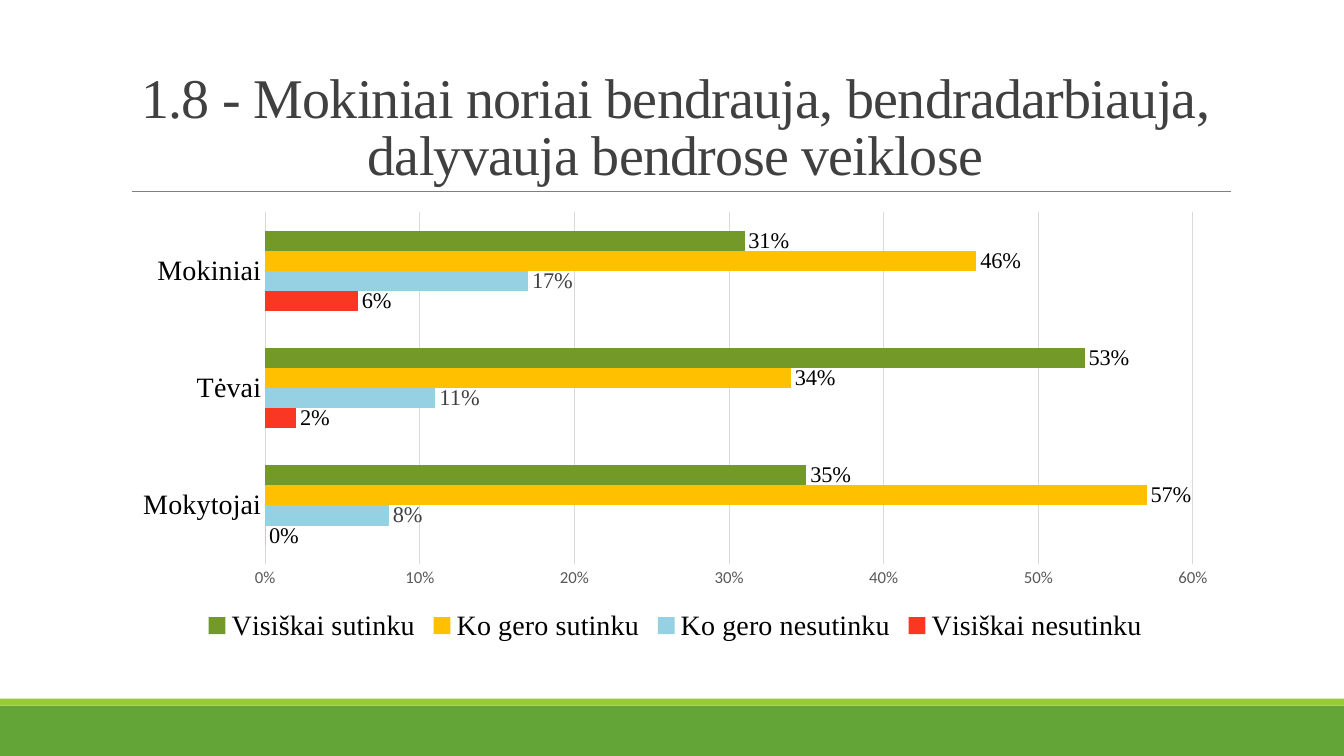
from dataclasses import dataclass

import lxml.etree
import pptx
import pptx.chart.data
import pptx.dml.color
import pptx.enum.chart
import pptx.enum.shapes
import pptx.enum.text
import pptx.oxml
import pptx.oxml.ns
import pptx.util

Pt = pptx.util.Pt
SERIF = "Times New Roman"
SANS = "Calibri"
GRID_GREY = "D9D9D9"
TITLE = "1.8 - Mokiniai noriai bendrauja, bendradarbiauja, dalyvauja bendrose veiklose"
GROUPS = ["Mokytojai", "Tėvai", "Mokiniai"]


@dataclass
class Band:
    top: float
    height: float
    color: str


@dataclass
class Answer:
    name: str
    shares: tuple[float, ...]
    color: str
    label_color: str = "000000"


BANDS = [Band(504, 36, "63A537"), Band(499, 5, "99CB38")]
ANSWERS = [
    Answer("Visiškai nesutinku", (0, 0.02, 0.06), "FA3722"),
    Answer("Ko gero nesutinku", (0.08, 0.11, 0.17), "95D1E2", "404040"),
    Answer("Ko gero sutinku", (0.57, 0.34, 0.46), "FFC000"),
    Answer("Visiškai sutinku", (0.35, 0.53, 0.31), "739A28"),
]


def rgb(color: str) -> pptx.dml.color.RGBColor:
    return pptx.dml.color.RGBColor.from_string(color)


def style_font(font, name: str, size: float, color: str) -> None:
    font.name = name
    font.size = Pt(size)
    font.bold = False
    font.color.rgb = rgb(color)


def style_line(line, color: str, width: float) -> None:
    line.color.rgb = rgb(color)
    line.width = Pt(width)


def add_band(slide, band: Band) -> None:
    shape = slide.shapes.add_shape(
        pptx.enum.shapes.MSO_SHAPE.RECTANGLE, Pt(0), Pt(band.top), Pt(960), Pt(band.height)
    )
    shape.shadow.inherit = False
    shape.fill.solid()
    shape.fill.fore_color.rgb = rgb(band.color)
    shape.line.fill.background()


def add_title_rule(slide) -> None:
    connector = slide.shapes.add_connector(
        pptx.enum.shapes.MSO_CONNECTOR.STRAIGHT, Pt(94.3), Pt(136.8), Pt(879.1), Pt(136.8)
    )
    style_line(connector.line, "808080", 0.5)
    lxml.etree.SubElement(connector._element.spPr, pptx.oxml.ns.qn("a:effectLst"))


def add_title(slide) -> None:
    text_frame = slide.shapes.add_textbox(Pt(86.4), Pt(22.6), Pt(792), Pt(114.2)).text_frame
    text_frame.word_wrap = True
    text_frame.vertical_anchor = pptx.enum.text.MSO_ANCHOR.BOTTOM
    text_frame.text = TITLE
    paragraph = text_frame.paragraphs[0]
    paragraph.alignment = pptx.enum.text.PP_ALIGN.CENTER
    paragraph.line_spacing = 0.85
    run = paragraph.runs[0]
    style_font(run.font, SERIF, 40, "404040")
    run.font._element.set("spc", "-50")


def style_axes(chart) -> None:
    no_tick = pptx.enum.chart.XL_TICK_MARK.NONE
    for axis in (chart.category_axis, chart.value_axis):
        axis.major_tick_mark = no_tick
        axis.minor_tick_mark = no_tick
    style_font(chart.category_axis.tick_labels.font, SERIF, 20, "000000")
    style_line(chart.category_axis.format.line, GRID_GREY, 0.75)

    value_axis = chart.value_axis
    value_axis.minimum_scale = 0
    value_axis.maximum_scale = 0.6
    value_axis.major_unit = 0.1
    value_axis.tick_labels.number_format = "0%"
    value_axis.tick_labels.number_format_is_linked = False
    style_font(value_axis.tick_labels.font, SANS, 12, "595959")
    value_axis.format.line.fill.background()
    value_axis.has_major_gridlines = True
    style_line(value_axis.major_gridlines.format.line, GRID_GREY, 0.75)


def style_series(series, answer: Answer) -> None:
    series.invert_if_negative = False
    series.format.fill.solid()
    series.format.fill.fore_color.rgb = rgb(answer.color)
    labels = series.data_labels
    labels.show_value = True
    labels.number_format = "0%"
    labels.number_format_is_linked = False
    labels.position = pptx.enum.chart.XL_LABEL_POSITION.OUTSIDE_END
    style_font(labels.font, SERIF, 16, answer.label_color)


def add_answer_chart(slide) -> None:
    data = pptx.chart.data.CategoryChartData(number_format="0%")
    data.categories = GROUPS
    for answer in ANSWERS:
        data.add_series(answer.name, answer.shares)
    chart = slide.shapes.add_chart(
        pptx.enum.chart.XL_CHART_TYPE.BAR_CLUSTERED,
        Pt(86.4), Pt(145.4), Pt(792), Pt(316.8), data,
    ).chart
    style_font(chart.font, SANS, 10, "000000")
    chart.has_title = False
    chart.has_legend = True
    chart.legend.position = pptx.enum.chart.XL_LEGEND_POSITION.BOTTOM
    chart.legend.include_in_layout = False
    style_font(chart.legend.font, SERIF, 20, "000000")
    style_axes(chart)
    plot = chart.plots[0]
    plot.gap_width = 182
    plot.vary_by_categories = False
    for series, answer in zip(plot.series, ANSWERS):
        style_series(series, answer)


def main() -> None:
    presentation = pptx.Presentation()
    presentation.slide_width = Pt(960)
    presentation.slide_height = Pt(540)
    slide = presentation.slides.add_slide(presentation.slide_layouts[6])
    for band in BANDS:
        add_band(slide, band)
    add_title_rule(slide)
    add_title(slide)
    add_answer_chart(slide)
    presentation.save("out.pptx")


if __name__ == "__main__":
    main()
